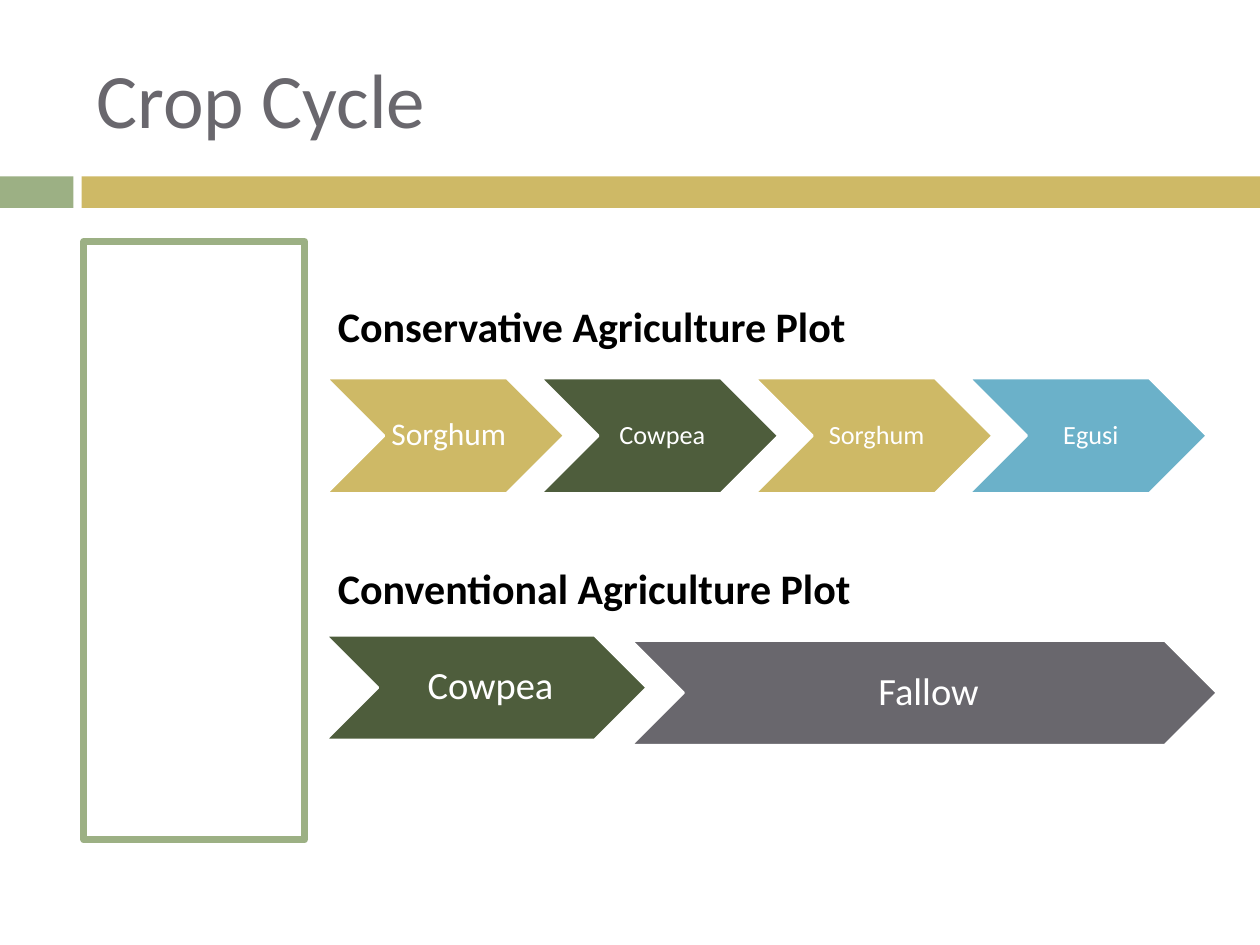
import pptx
import pptx.dml.color
import pptx.enum.shapes
import pptx.enum.text
import pptx.util

Pt = pptx.util.Pt
RGB = pptx.dml.color.RGBColor
MSO_SHAPE = pptx.enum.shapes.MSO_SHAPE
PP_ALIGN = pptx.enum.text.PP_ALIGN
MSO_ANCHOR = pptx.enum.text.MSO_ANCHOR

FONT = "Calibri"
SAGE = RGB(0x9C, 0xB0, 0x84)
GOLD = RGB(0xCE, 0xB9, 0x66)
GREEN = RGB(0x4E, 0x5D, 0x3C)
BLUE = RGB(0x6B, 0xB1, 0xC9)
GREY = RGB(0x69, 0x67, 0x6D)
WHITE = RGB(0xFF, 0xFF, 0xFF)
BLACK = RGB(0, 0, 0)


def set_text(sp, text, size, color, align=PP_ALIGN.LEFT, bold=False):
    tf = sp.text_frame
    tf.text = text
    p = tf.paragraphs[0]
    p.alignment = align
    p.font.name = FONT
    p.font.size = Pt(size)
    p.font.bold = bold
    p.font.color.rgb = color
    return tf


def add_box(s, shape, left, top, width, height, fill=None, line=None, weight=1.5):
    sp = s.shapes.add_shape(shape, Pt(left), Pt(top), Pt(width), Pt(height))
    sp.shadow.inherit = False
    if fill is None:
        sp.fill.background()
    else:
        sp.fill.solid()
        sp.fill.fore_color.rgb = fill
    if line is None:
        sp.line.fill.background()
    else:
        sp.line.color.rgb = line
        sp.line.width = Pt(weight)
    return sp


def add_title(s, text):
    sp = s.shapes.title
    sp.left, sp.top, sp.width, sp.height = Pt(48), Pt(21.6), Pt(636), Pt(68.4)
    tf = set_text(sp, text, 44, GREY)
    tf.vertical_anchor = MSO_ANCHOR.MIDDLE


def add_heading(s, text, top):
    sp = s.shapes.add_textbox(Pt(186), Pt(top), Pt(312), Pt(36))
    tf = set_text(sp, text, 24, BLACK, bold=True)
    tf.word_wrap = False


def add_stage(s, text, left, top, width, height, fill, size):
    """Add one crop of a cycle as a labelled chevron."""
    sp = add_box(s, MSO_SHAPE.CHEVRON, left, top, width, height, fill, WHITE)
    tf = set_text(sp, text, size, WHITE, PP_ALIGN.CENTER)
    tf.paragraphs[0].line_spacing = 0.9
    tf.word_wrap = False
    tf.vertical_anchor = MSO_ANCHOR.MIDDLE
    tf.margin_left = Pt(size / 3)
    tf.margin_right = tf.margin_top = tf.margin_bottom = Pt(size / 9)


def main():
    prs = pptx.Presentation()
    prs.slide_width, prs.slide_height = Pt(720), Pt(540)
    s = prs.slides.add_slide(prs.slide_layouts[5])

    add_box(s, MSO_SHAPE.RECTANGLE, 0, 100.8, 42, 18, SAGE)
    add_box(s, MSO_SHAPE.RECTANGLE, 46.6, 100.8, 673.4, 18, GOLD)
    add_title(s, "Crop Cycle")
    add_box(s, MSO_SHAPE.RECTANGLE, 48, 138, 126, 342, line=SAGE, weight=4)

    add_heading(s, "Conservative Agriculture Plot", 168)
    rotation = [("Sorghum", GOLD, 18), ("Cowpea", GREEN, 15),
                ("Sorghum", GOLD, 15), ("Egusi", BLUE, 15)]
    for i, (crop, color, size) in enumerate(rotation):
        add_stage(s, crop, 186.5 + 122.4 * i, 216, 136, 66, color, size)

    add_heading(s, "Conventional Agriculture Plot", 318)
    add_stage(s, "Cowpea", 186, 363, 183.6, 59.8, GREEN, 22)
    add_stage(s, "Fallow", 360.7, 366, 334.8, 59.8, GREY, 22)

    prs.save("out.pptx")


if __name__ == "__main__":
    main()
